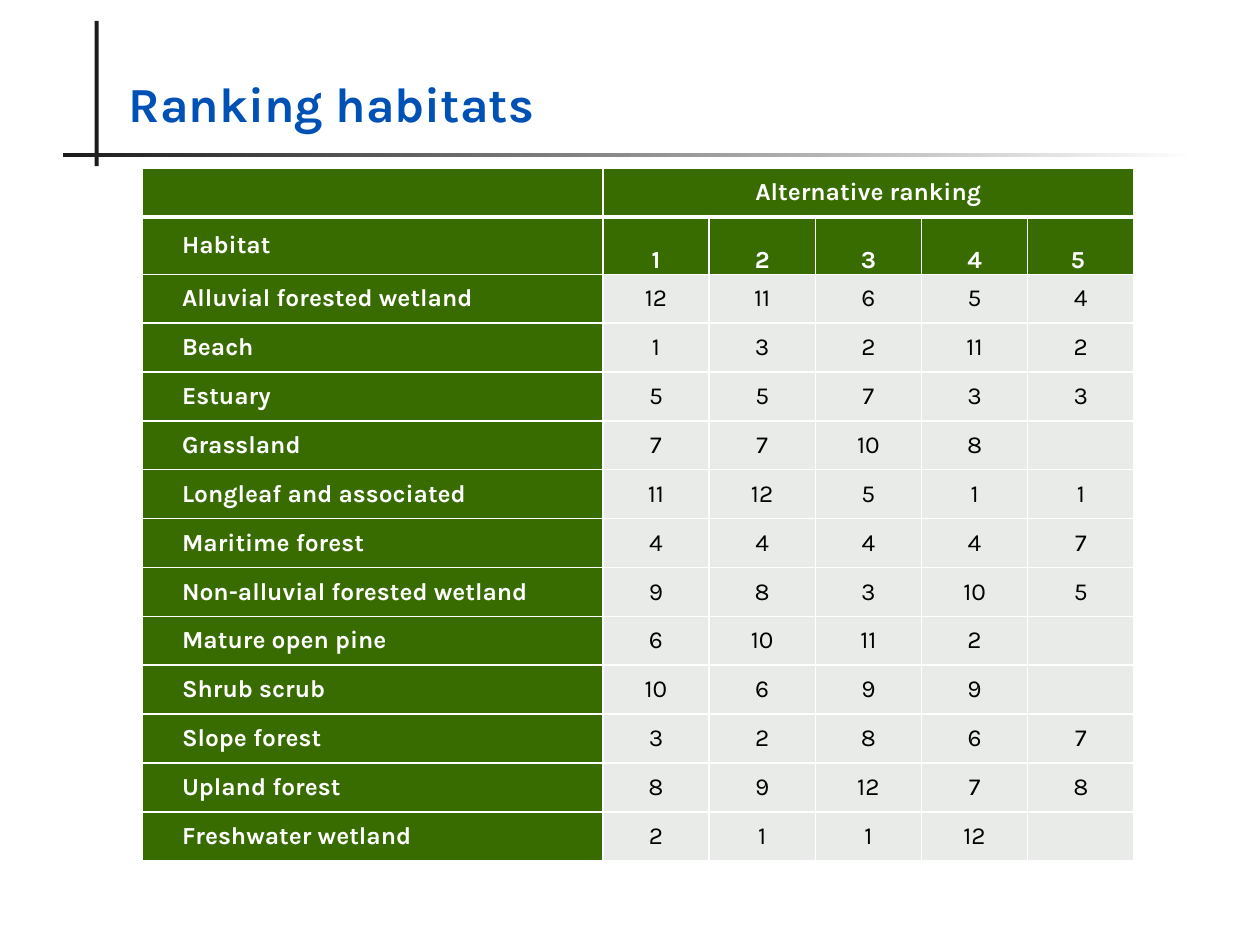
from lxml.etree import SubElement as Sub
from pptx import Presentation
from pptx.dml.color import RGBColor
from pptx.enum.shapes import MSO_SHAPE as Shape
from pptx.enum.text import MSO_ANCHOR as Anchor, PP_ALIGN as Align
from pptx.oxml.ns import qn
from pptx.util import Pt

INK = RGBColor(0x1C, 0x1C, 0x1C)
BLUE = RGBColor(0x00, 0x51, 0xB6)
GREEN = RGBColor(0x39, 0x6C, 0x00)
PALE = RGBColor(0xE8, 0xEB, 0xE7)
WHITE = RGBColor(0xFF, 0xFF, 0xFF)
BLACK = RGBColor(0, 0, 0)

ROWS = [
    ("", "Alternative ranking", "", "", "", ""),
    ("Habitat", "1", "2", "3", "4", "5 "),
    ("Alluvial forested wetland", 12, 11, 6, 5, 4),
    ("Beach", 1, 3, 2, 11, 2),
    ("Estuary", 5, 5, 7, 3, 3),
    ("Grassland", 7, 7, 10, 8, ""),
    ("Longleaf and associated", 11, 12, 5, 1, 1),
    ("Maritime forest", 4, 4, 4, 4, 7),
    ("Non-alluvial forested wetland", 9, 8, 3, 10, 5),
    ("Mature open pine", 6, 10, 11, 2, ""),
    ("Shrub scrub", 10, 6, 9, 9, ""),
    ("Slope forest", 3, 2, 8, 6, 7),
    ("Upland forest", 8, 9, 12, 7, 8),
    ("Freshwater wetland", 2, 1, 1, 12, ""),
]


def write(para, text, size, color, bold):
    run = para.add_run()
    run.text = text
    look = {"name": "Karla", "size": Pt(size), "bold": bold}
    for key, val in look.items():
        setattr(run.font, key, val)
    run.font.color.rgb = color


def edge(cell, side, width):
    """Draw one white cell border; call before the cell is filled."""
    line = Sub(cell._tc.get_or_add_tcPr(), qn("a:ln" + side), w=str(Pt(width)))
    fill = Sub(line, qn("a:solidFill"))
    Sub(fill, qn("a:srgbClr"), val=str(WHITE))


deck = Presentation()
deck.slide_width, deck.slide_height = Pt(720), Pt(540)
slide = deck.slides.add_slide(deck.slide_layouts[6])
shapes = slide.shapes

# Crossed rules beside and below the title
post = shapes.add_shape(Shape.RECTANGLE, Pt(54), Pt(12), Pt(2.4), Pt(83))
rule = shapes.add_shape(Shape.RECTANGLE, Pt(36), Pt(87.6), Pt(648), Pt(2.2))
for bar in (post, rule):
    bar.shadow.inherit = False
    bar.line.fill.background()
post.fill.solid()
post.fill.fore_color.rgb = INK
rule.fill.gradient()
rule.fill.gradient_angle = 0
for stop, pos, color in zip(rule.fill.gradient_stops, (0, 1), (INK, WHITE)):
    stop.position = pos
    stop.color.rgb = color

title = shapes.add_textbox(Pt(66.5), Pt(18), Pt(617.5), Pt(61)).text_frame
title.word_wrap = True
title.vertical_anchor = Anchor.BOTTOM
write(title.paragraphs[0], "Ranking habitats", 28, BLUE, True)

# Ranking table
frame = shapes.add_table(len(ROWS), 6, Pt(81), Pt(96), Pt(567), Pt(396))
table = frame.table
table.first_row = table.horz_banding = False
for c, col in enumerate(table.columns):
    col.width = Pt(60.7 if c else 263.5)
for r, row in enumerate(table.rows):
    row.height = Pt(32.8 if r == 1 else 27.94)
table.cell(0, 1).merge(table.cell(0, 5))

for r, row in enumerate(ROWS):
    for c, text in enumerate(row):
        cell = table.cell(r, c)
        head = r < 2 or c == 0
        low = r == 1 and c > 0
        box = {
            "margin_left": Pt(5), "margin_right": Pt(5),
            "margin_top": 0, "margin_bottom": 0,
            "vertical_anchor": Anchor.BOTTOM if low else Anchor.MIDDLE,
        }
        for key, val in box.items():
            setattr(cell, key, val)
        for side in "LRTB":
            thick = (r, side) in ((0, "B"), (1, "T"))
            edge(cell, side, 3 if thick else 1)
        cell.fill.solid()
        cell.fill.fore_color.rgb = GREEN if head else PALE
        if text == "":
            continue
        para = cell.text_frame.paragraphs[0]
        para.space_after = Pt(3)
        if c:
            para.alignment = Align.CENTER
        else:
            para._p.get_or_add_pPr().set("indent", str(Pt(18)))
        write(para, str(text), 14, WHITE if head else BLACK, head)
        # Equal space above and below keeps the text centred in its row
        para.space_before = para.space_after

deck.save("out.pptx")
